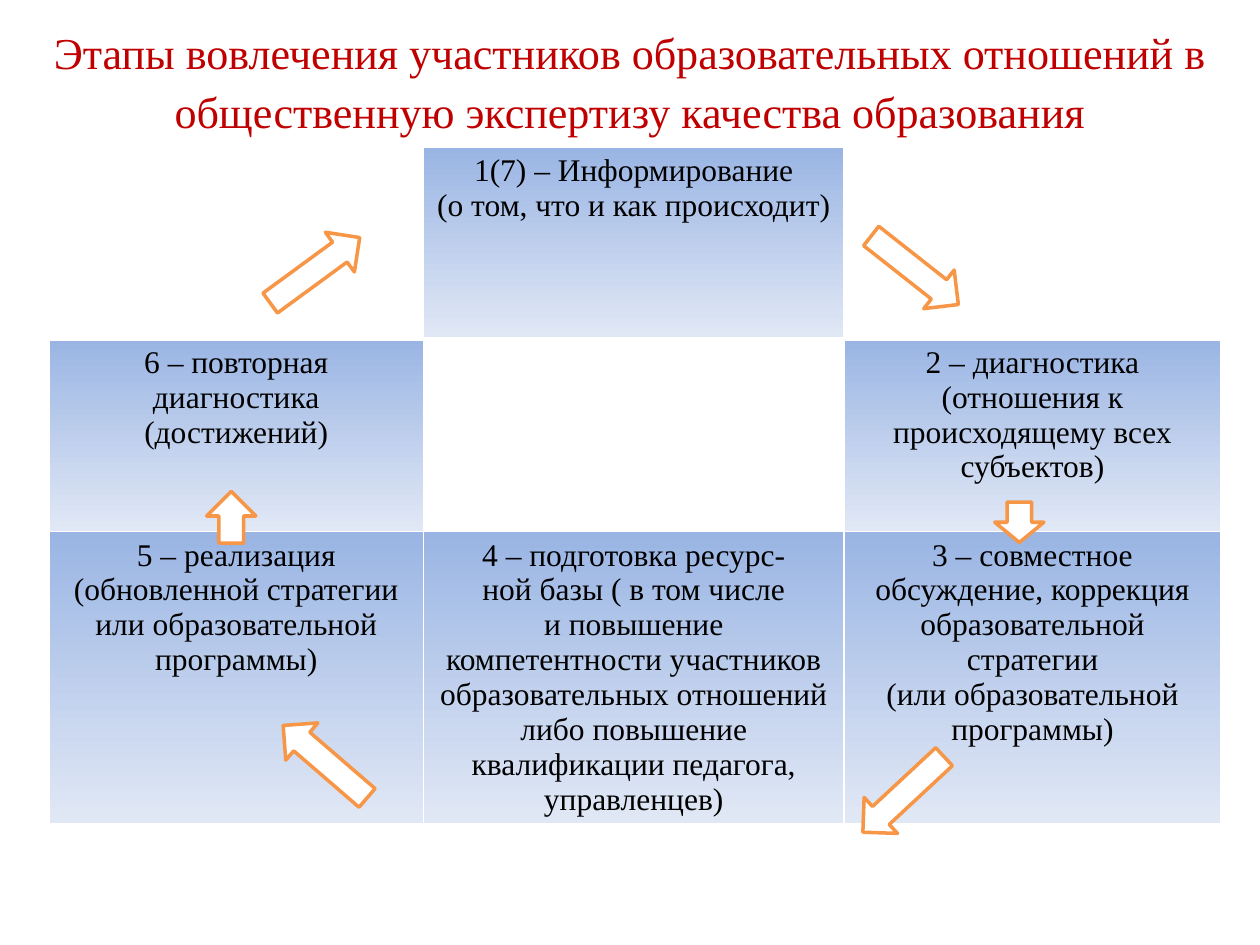
from lxml.etree import SubElement
from pptx import Presentation
from pptx.dml.color import RGBColor
from pptx.enum.shapes import MSO_SHAPE as Shape
from pptx.enum.text import MSO_ANCHOR as Anchor, MSO_AUTO_SIZE as AutoSize, PP_ALIGN as Align
from pptx.oxml.ns import qn
from pptx.util import Inches, Pt

FONT = "Times New Roman"
RED = RGBColor(0xC0, 0x00, 0x00)
BLACK = RGBColor(0x00, 0x00, 0x00)
WHITE = RGBColor(0xFF, 0xFF, 0xFF)
ORANGE = RGBColor(0xF7, 0x96, 0x46)
BLUE_TOP = RGBColor(0x9A, 0xB5, 0xE4)
BLUE_BOTTOM = RGBColor(0xE1, 0xE8, 0xF5)

TITLE = ("Этапы вовлечения участников образовательных отношений в "
         "общественную экспертизу качества образования")
COLUMNS = [2.97, 3.34, 2.99]
ROWS = [1.52, 1.53, 2.31]
STAGES = [
    [[], ["1(7) – Информирование\v(о том, что и как происходит)"], []],
    [["6 – повторная диагностика (достижений)"], [],
     ["2 – диагностика (отношения к происходящему всех субъектов)"]],
    [["5 – реализация (обновленной стратегии или образовательной программы)"],
     ["4 – подготовка ресурс-", "ной базы ( в том числе",
      "и повышение компетентности участников образовательных отношений "
      "либо повышение квалификации педагога,", "управленцев)"],
     ["3 – совместное обсуждение, коррекция образовательной стратегии",
      "(или образовательной", "программы)"]],
]
ARROWS = [
    (6.82, 1.95, 0.88, 38.2),
    (2.06, 1.95, 0.88, 323.8),
    (2.14, 5.85, 0.88, 220.8),
    (6.73, 6.11, 0.88, 137.1),
    (7.93, 3.95, 0.32, 90),
    (1.63, 3.91, 0.41, 270),
]


def style_paragraph(para, size, color):
    """Centre a paragraph and set its font."""
    para.alignment = Align.CENTER
    para.font.name = FONT
    para.font.size = Pt(size)
    para.font.color.rgb = color


def add_title(page, left, top, width, height):
    """Place the title in the given box."""
    title = page.shapes.title
    title.left, title.top, title.width, title.height = map(Inches, (left, top, width, height))
    frame = title.text_frame
    frame.text = TITLE
    frame.word_wrap = True
    frame.auto_size = AutoSize.NONE
    frame.vertical_anchor = Anchor.MIDDLE
    frame.paragraphs[0].line_spacing = 1.1
    style_paragraph(frame.paragraphs[0], 25.2, RED)


def set_borders(cell, bottom):
    """Give a cell white borders, with its own bottom width in points."""
    properties = cell._tc.get_or_add_tcPr()
    for side, width in (("L", 1), ("R", 1), ("T", 1), ("B", bottom)):
        line = SubElement(properties, qn(f"a:ln{side}"), w=str(Pt(width)))
        SubElement(SubElement(line, qn("a:solidFill")), qn("a:srgbClr"), val=str(WHITE))


def fill_cell(cell, lines):
    """Write the stage into a cell and shade it, or leave the cell clear."""
    if not lines:
        cell.fill.background()
        return
    cell.text_frame.text = "\n".join(lines)
    for para in cell.text_frame.paragraphs:
        style_paragraph(para, 18, BLACK)
    cell.fill.gradient()
    cell.fill.gradient_angle = 270
    for stop, color in zip(cell.fill.gradient_stops, (BLUE_TOP, BLUE_BOTTOM)):
        stop.color.rgb = color


def add_stages(page, left, top):
    """Place the table of stages with its corner at the given point."""
    table = page.shapes.add_table(
        len(ROWS), len(COLUMNS), Inches(left), Inches(top),
        Inches(sum(COLUMNS)), Inches(sum(ROWS))).table
    table.first_row = table.horz_banding = False
    for column, width in zip(table.columns, COLUMNS):
        column.width = Inches(width)
    for index, (row, height, stages) in enumerate(zip(table.rows, ROWS, STAGES)):
        row.height = Inches(height)
        for cell, lines in zip(row.cells, stages):
            set_borders(cell, 3 if index == 0 else 1)
            fill_cell(cell, lines)


def add_arrow(page, left, top, length, angle):
    """Place one block arrow turned by the given angle."""
    arrow = page.shapes.add_shape(
        Shape.RIGHT_ARROW, Inches(left), Inches(top), Inches(length), Inches(0.39))
    arrow.rotation = angle
    arrow.shadow.inherit = False
    arrow.fill.solid()
    arrow.fill.fore_color.rgb = WHITE
    arrow.line.color.rgb = ORANGE
    arrow.line.width = Pt(2)


def main():
    """Build the slide and save it."""
    deck = Presentation()
    deck.slide_width, deck.slide_height = Inches(10), Inches(7.5)
    page = deck.slides.add_slide(deck.slide_layouts[5])
    add_title(page, 0, 0, 10, 1.25)
    add_stages(page, 0.39, 1.17)
    for arrow in ARROWS:
        add_arrow(page, *arrow)
    deck.save("out.pptx")


if __name__ == "__main__":
    main()
